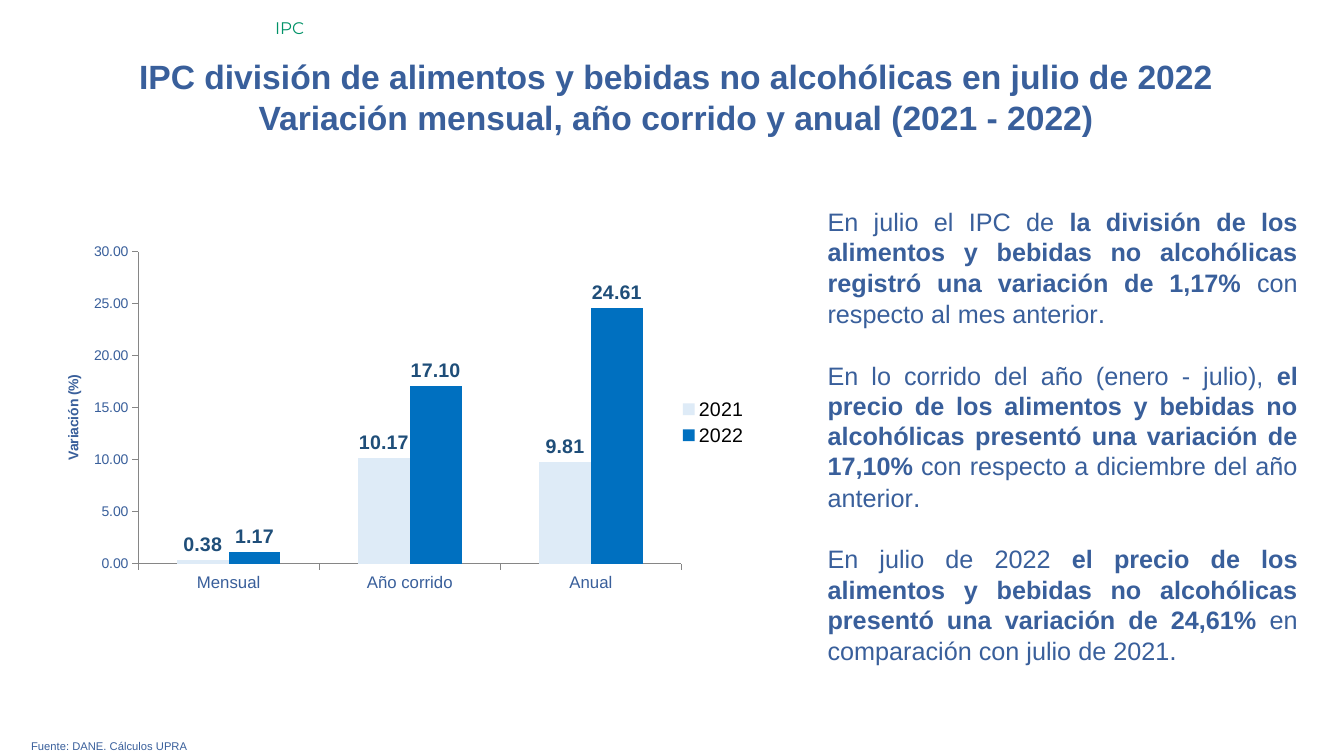
from lxml import etree
from pptx import Presentation, util as u
from pptx.chart import data as chart_data
from pptx.dml.color import RGBColor
from pptx.enum import chart as charts, text
from pptx.oxml import ns

WIDTH, HEIGHT = 13.33, 7.5
NAVY, GREEN, AXIS_GREY = "395F9B", "009267", "868686"
LABEL_BLUE, BLACK = "1F4E79", "000000"
CENTER, JUSTIFY, LEFT = (text.PP_ALIGN.CENTER, text.PP_ALIGN.JUSTIFY, text.PP_ALIGN.LEFT)

TITLE = [
    ["IPC división de alimentos y bebidas no alcohólicas en julio de 2022"],
    ["Variación mensual, año corrido y anual (2021 - 2022)"],
]
FINDINGS = [
    ["En julio el IPC de ",
     "la división de los alimentos y bebidas no alcohólicas registró una variación de 1,17% ",
     "con respecto al mes anterior", "."],
    ["En lo corrido del año (enero - julio), ",
     "el precio de los alimentos y bebidas no alcohólicas presentó una variación de 17,10% ",
     "con respecto a diciembre del año anterior", "."],
    ["En julio de 2022 ",
     "el precio de los alimentos y bebidas no alcohólicas presentó una variación de 24,61%",
     " en comparación con julio de 2021", "."],
]
TITLE_STYLE = [{"size": 24, "bold": True}]
FINDING_STYLE = [{"size": 18}, {"size": 18, "bold": True}, {"size": 18}, {"size": 19}]
BOXES = [
    ((0.45, 0.51, 12.51, 0.91), TITLE, TITLE_STYLE, CENTER, 0),
    ((0.21, 7.29, 12.91, 0.24), [["Fuente: DANE. Cálculos UPRA"]], [{"size": 8}], JUSTIFY, 0),
    ((8.11, 2, 4.86, 4.73), FINDINGS, FINDING_STYLE, JUSTIFY, 22),
    ((2.63, 0.13, 10.7, 0.3), [["IPC"]],
     [{"size": 12, "name": "Montserrat", "color": GREEN}], LEFT, 0),
]
PERIODS = ["Mensual", "Año corrido", "Anual"]
SERIES = [
    ("2021", "DEEBF7", (0.38, 10.17, 9.81)),
    ("2022", "0070C0", (1.17, 17.1, 24.61)),
]
CHART_AREA = (0.61, 2.39, 6.91, 3.6)
PLOT_AREA = {"x": 0.11, "y": 0.03, "w": 0.78, "h": 0.86}


def rgb(value):
    """Turn a hex string into a colour."""
    return RGBColor.from_string(value)


def assign(target, values):
    """Set each named attribute on the target."""
    for name, value in values.items():
        setattr(target, name, value)


def style(font, size, color=NAVY, bold=False, name="Arial"):
    """Format a font."""
    assign(font, {"size": u.Pt(size), "bold": bold, "name": name})
    font.color.rgb = rgb(color)


def add_text(page, area, paragraphs, formats, align, gap):
    """Add a wrapped text box, one list of spans per paragraph."""
    frame = page.shapes.add_textbox(*map(u.Inches, area)).text_frame
    frame.word_wrap = True
    for index, spans in enumerate(paragraphs):
        para = frame.add_paragraph() if index else frame.paragraphs[0]
        assign(para, {"alignment": align, "space_before": u.Pt(gap if index else 0)})
        for words, settings in zip(spans, formats):
            span = para.add_run()
            span.text = words
            style(span.font, **settings)


def place_plot(chart):
    """Fix the inner plot area as shares of the chart."""
    plot_area = chart.plots[0]._element.getparent()
    for old in plot_area.findall(ns.qn("c:layout")):
        plot_area.remove(old)
    layout = etree.Element(ns.qn("c:layout"))
    manual = etree.SubElement(layout, ns.qn("c:manualLayout"))
    settings = {"layoutTarget": "inner", "xMode": "edge", "yMode": "edge", **PLOT_AREA}
    for name, value in settings.items():
        etree.SubElement(manual, ns.qn("c:" + name)).set("val", str(value))
    plot_area.insert(0, layout)


def add_variation_chart(page):
    """Add the column chart of price variation."""
    content = chart_data.CategoryChartData(number_format="0.00")
    content.categories = PERIODS
    for name, _, values in SERIES:
        content.add_series(name, values)
    chart = page.shapes.add_chart(
        charts.XL_CHART_TYPE.COLUMN_CLUSTERED, *map(u.Inches, CHART_AREA), content).chart
    style(chart.font, 10, BLACK)
    assign(chart, {"has_title": False, "has_legend": True})
    assign(chart.legend, {"position": charts.XL_LEGEND_POSITION.RIGHT, "include_in_layout": False})
    style(chart.legend.font, 14, BLACK)

    for axis, size in ((chart.category_axis, 12), (chart.value_axis, 10)):
        assign(axis, {"has_major_gridlines": False,
                      "major_tick_mark": charts.XL_TICK_MARK.OUTSIDE,
                      "tick_label_position": charts.XL_TICK_LABEL_POSITION.LOW})
        style(axis.tick_labels.font, size)
        axis.format.line.color.rgb = rgb(AXIS_GREY)
    scale = chart.value_axis
    assign(scale, {"minimum_scale": 0, "maximum_scale": 30, "major_unit": 5})
    assign(scale.tick_labels, {"number_format": "0.00", "number_format_is_linked": False})
    title = scale.axis_title.text_frame
    title.text = "Variación (%)"
    style(title.paragraphs[0].runs[0].font, 10, bold=True)

    plot = chart.plots[0]
    assign(plot, {"gap_width": 150, "overlap": 0, "vary_by_categories": False})
    for series, (_, color, _) in zip(plot.series, SERIES):
        series.format.fill.solid()
        series.format.fill.fore_color.rgb = rgb(color)
        labels = series.data_labels
        assign(labels, {"show_value": True, "number_format": "0.00",
                        "number_format_is_linked": False,
                        "position": charts.XL_LABEL_POSITION.OUTSIDE_END})
        style(labels.font, 14, LABEL_BLUE, bold=True)
    place_plot(chart)


def main():
    """Build and save the slide."""
    deck = Presentation()
    assign(deck, {"slide_width": u.Inches(WIDTH), "slide_height": u.Inches(HEIGHT)})
    page = deck.slides.add_slide(deck.slide_layouts[6])
    for box in BOXES:
        add_text(page, *box)
    add_variation_chart(page)
    deck.save("out.pptx")


if __name__ == "__main__":
    main()
